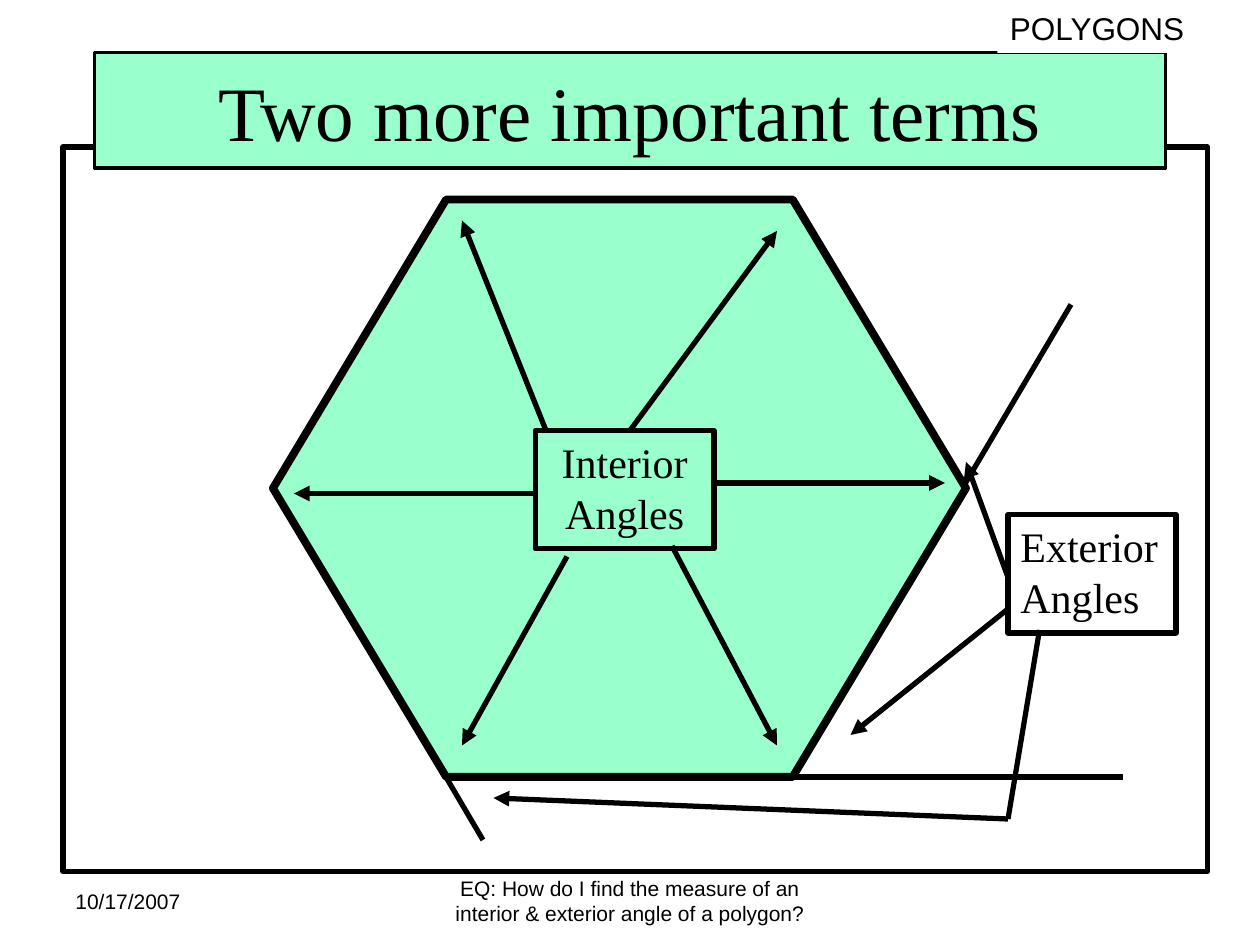
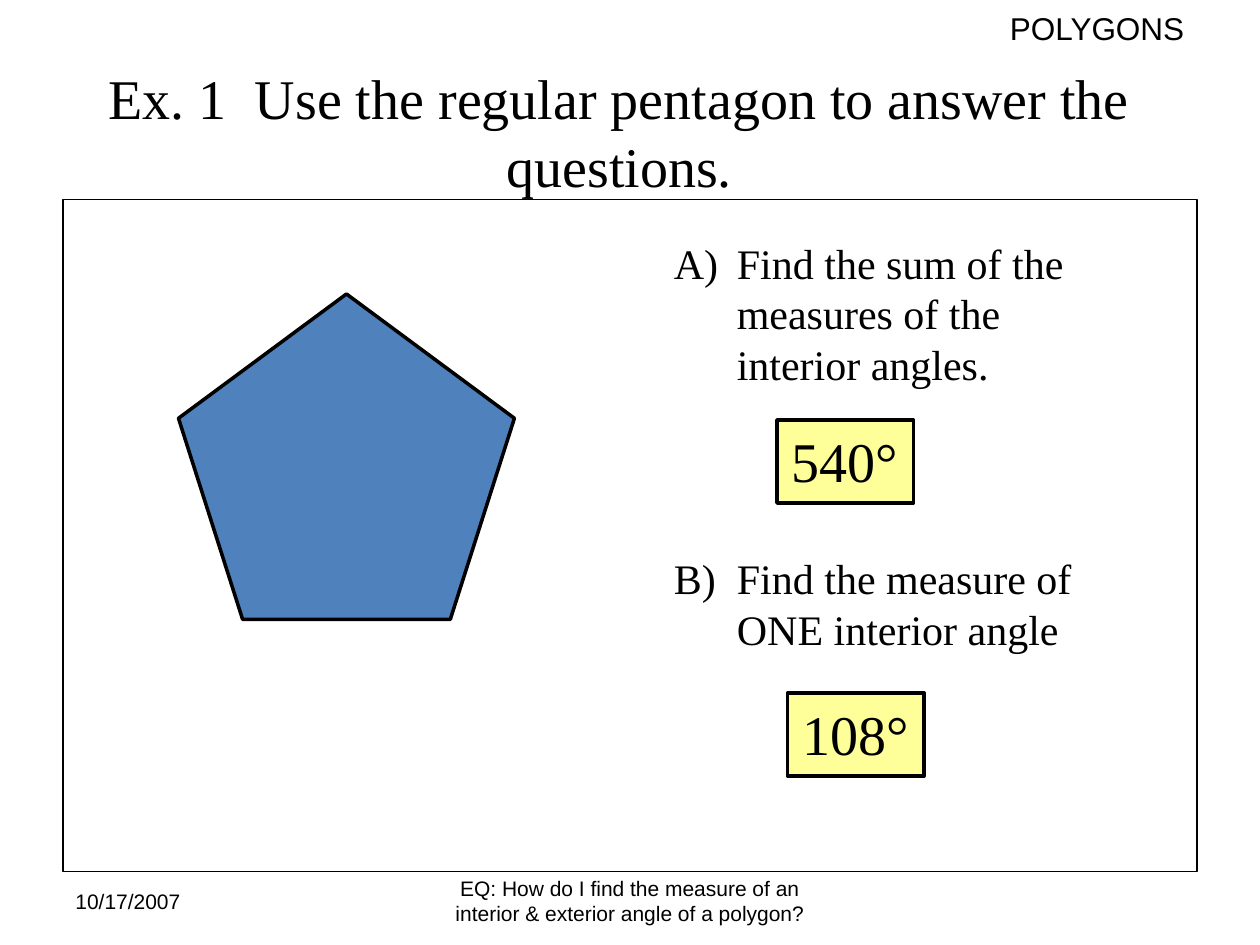
from lxml.etree import SubElement
from pptx import Presentation
from pptx.dml.color import RGBColor
from pptx.enum.shapes import MSO_CONNECTOR, MSO_SHAPE
from pptx.enum.text import MSO_ANCHOR, MSO_AUTO_SIZE, PP_ALIGN
from pptx.oxml.ns import qn
from pptx.util import Inches, Pt

# Shared style: the page is a grid of 120 columns by 90 rows
COLUMNS, ROWS = 120, 90
BLACK, WHITE, MINT, BLUE, YELLOW = "000000", "FFFFFF", "99FFCC", "4F81BD", "FFFF99"
SERIF, SANS = "Times New Roman", "Arial"
LABEL = {"size": 24, "name": SERIF}
ANSWER = {"size": 32, "name": SERIF}
FOOTER = {"size": 12, "name": SANS}
TOPIC = {"size": 18, "name": SANS}


def color(hex_string):
    return RGBColor.from_string(hex_string)


class PageBuilder:
    def __init__(self):
        self.deck = Presentation()
        self.deck.slide_width, self.deck.slide_height = Inches(10), Inches(7.5)
        self.page = None

    def across(self, columns):
        return round(self.deck.slide_width * columns / COLUMNS)

    def down(self, rows):
        return round(self.deck.slide_height * rows / ROWS)

    def place(self, area):
        left, top, width, height = area
        return self.across(left), self.down(top), self.across(width), self.down(height)

    def new_page(self):
        """Start a title-only page with its date and guiding question."""
        self.page = self.deck.slides.add_slide(self.deck.slide_layouts[5])
        self.text((6, 83.4, 28, 4.8), "10/17/2007", FOOTER, anchor=MSO_ANCHOR.MIDDLE)
        self.text((41, 83.4, 38, 4.8),
                  "EQ: How do I find the measure of an interior & exterior angle of a polygon?",
                  FOOTER, PP_ALIGN.CENTER, MSO_ANCHOR.MIDDLE)

    def topic(self):
        """Put the topic tag on top of everything else."""
        tag = self.shape((95, 0.25, 20, 4.8), fill=WHITE)
        self.set_text(tag, ["POLYGONS"], TOPIC)

    def paint(self, shape, fill=None, weight=None):
        if fill:
            shape.fill.solid()
            shape.fill.fore_color.rgb = color(fill)
        else:
            shape.fill.background()
        if weight:
            shape.line.color.rgb = color(BLACK)
            shape.line.width = Pt(weight)
        else:
            shape.line.fill.background()

    def set_text(self, shape, texts, font, align=PP_ALIGN.LEFT, anchor=MSO_ANCHOR.TOP):
        frame = shape.text_frame
        settings = {"word_wrap": True, "auto_size": MSO_AUTO_SIZE.NONE,
                    "vertical_anchor": anchor}
        for key, value in settings.items():
            setattr(frame, key, value)
        for index, text in enumerate(texts):
            para = frame.add_paragraph() if index else frame.paragraphs[0]
            para.alignment = align
            span = para.add_run()
            span.text = text
            for key, value in font.items():
                setattr(span.font, key, Pt(value) if key == "size" else value)
            span.font.color.rgb = color(BLACK)
        return frame

    def title(self, area, text, size, fill=None, weight=None):
        title = self.page.shapes.title
        title.left, title.top, title.width, title.height = self.place(area)
        self.paint(title, fill, weight)
        self.set_text(title, [text], {"size": size, "name": SERIF},
                      PP_ALIGN.CENTER, MSO_ANCHOR.MIDDLE)
        title.element.getparent().append(title.element)  # bring in front of the frame

    def text(self, area, text, font, align=PP_ALIGN.LEFT, anchor=MSO_ANCHOR.TOP):
        box = self.page.shapes.add_textbox(*self.place(area))
        self.set_text(box, [text], font, align, anchor)

    def shape(self, area, kind=MSO_SHAPE.RECTANGLE, fill=None, weight=None):
        shape = self.page.shapes.add_shape(kind, *self.place(area))
        shape.shadow.inherit = False
        self.paint(shape, fill, weight)
        return shape

    def label(self, area, text, font, align=PP_ALIGN.CENTER, fill=None, weight=3):
        self.set_text(self.shape(area, fill=fill, weight=weight), [text], font, align)

    def line(self, start, end, arrow=False):
        line = self.page.shapes.add_connector(
            MSO_CONNECTOR.STRAIGHT, self.across(start[0]), self.down(start[1]),
            self.across(end[0]), self.down(end[1]))
        line.line.color.rgb = color(BLACK)
        line.line.width = Pt(3)
        properties = line.element.spPr
        if arrow:
            SubElement(properties.find(qn("a:ln")), qn("a:tailEnd"), type="triangle")
        SubElement(properties, qn("a:effectLst"))

    def lettered_list(self, area, texts, gap):
        box = self.page.shapes.add_textbox(*self.place(area))
        frame = self.set_text(box, texts, LABEL)
        indent = Inches(0.5)
        for index, para in enumerate(frame.paragraphs):
            if index:
                para.space_before = Pt(gap)
            properties = para._p.get_or_add_pPr()
            properties.set("marL", str(indent))
            properties.set("indent", str(-indent))
            SubElement(properties, qn("a:buFont"), typeface=SERIF)
            SubElement(properties, qn("a:buAutoNum"), type="alphaUcParenR")


def build_terms(builder):
    builder.new_page()
    builder.shape((6, 14, 109, 69), fill=WHITE, weight=3)
    builder.title((9, 5, 102, 11), "Two more important terms", 44, MINT, 2)

    # Extended sides, then the hexagon over them
    for start, end in [((72, 74), (107, 74)), ((76, 73), (102, 29)), ((26, 46), (46, 80))]:
        builder.line(start, end)
    hexagon = builder.shape((26, 19, 66, 55), MSO_SHAPE.HEXAGON, MINT, 4.5)
    hexagon.adjustments[0] = 0.3

    # Exterior angles
    builder.label((96, 49, 16, 11.28), "Exterior Angles", LABEL, PP_ALIGN.LEFT)
    builder.line((99, 60), (96, 78))
    exterior = [((96, 55), (92, 44)), ((96, 58), (81, 70)), ((96, 78), (47, 76))]

    # Interior angles
    interior = [((51, 47), (28, 47)), ((52, 41), (44, 21)), ((60, 41), (74, 22)),
                ((64, 52), (74, 71)), ((68, 46), (90, 46)), ((54, 53), (44, 71))]
    for start, end in exterior + interior:
        builder.line(start, end, arrow=True)
    builder.label((51, 41, 17, 11.28), "Interior Angles", LABEL)
    builder.topic()


def build_example(builder):
    builder.new_page()
    builder.shape((6, 19, 108, 64), fill=WHITE, weight=0.75)
    builder.title((2, 5, 114, 15),
                  "Ex. 1  Use the regular pentagon to answer the questions.", 32)

    # Questions, pentagon and answers
    builder.lettered_list((63, 22, 43, 41.88),
                          ["Find the sum of the measures of the interior angles.",
                           "Find the measure of ONE interior angle"], gap=94)
    builder.shape((17, 28, 32, 31), MSO_SHAPE.REGULAR_PENTAGON, BLUE, 2)
    for left, top, answer in [(74, 40, "540°"), (75, 66, "108°")]:
        builder.label((left, top, 13, 7.92), answer, ANSWER, fill=YELLOW, weight=2)
    builder.topic()


def main():
    builder = PageBuilder()
    build_terms(builder)
    build_example(builder)
    builder.deck.save("out.pptx")


if __name__ == "__main__":
    main()
